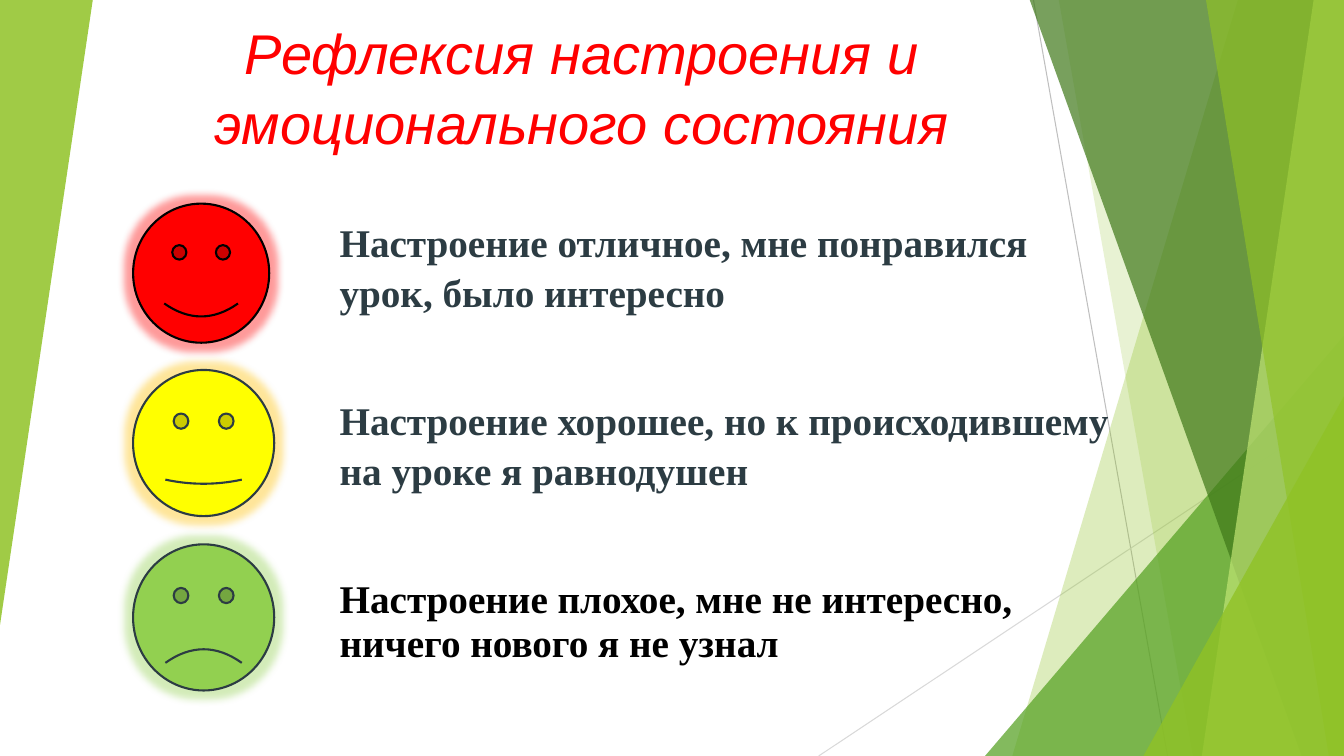
from lxml import etree
from pptx import Presentation
from pptx.dml.color import RGBColor
from pptx.enum.shapes import MSO_CONNECTOR, MSO_SHAPE
from pptx.enum.text import MSO_ANCHOR, MSO_AUTO_SIZE, PP_ALIGN
from pptx.oxml.ns import qn
from pptx.util import Inches, Pt

COLORS = {
    "lime": "90C226", "pale_lime": "C0E474", "green": "54A021",
    "dark_green": "3F7819", "gray": "BFBFBF", "light_gray": "D9D9D9",
    "red": "FF0000", "yellow": "FFFF00", "amber": "FFC000",
    "grass": "92D050", "slate": "2C3C43", "black": "000000",
}


def rgb(name):
    return RGBColor.from_string(COLORS[name])


def paint(sp, color, opacity=100):
    sp.shadow.inherit = False
    sp.fill.solid()
    sp.fill.fore_color.rgb = rgb(color)
    sp.line.fill.background()
    if opacity < 100:
        clr = sp.fill._xPr.find(qn("a:solidFill"))[0]
        etree.SubElement(clr, qn("a:alpha"), val=str(opacity * 1000))


def add_line(s, x1, y1, x2, y2, color):
    line = s.shapes.add_connector(
        MSO_CONNECTOR.STRAIGHT, Inches(x1), Inches(y1), Inches(x2), Inches(y2))
    line.line.color.rgb = rgb(color)
    line.line.width = Pt(0.75)
    etree.SubElement(line._element.spPr, qn("a:effectLst"))


def add_facet(s, top_left, bottom_left, color, opacity):
    top, bottom, right = Inches(-0.01), Inches(7.5), Inches(13.33)
    fb = s.shapes.build_freeform(Inches(top_left), top)
    fb.add_line_segments(
        [(right, top), (right, bottom), (Inches(bottom_left), bottom)], close=True)
    paint(fb.convert_to_shape(), color, opacity)


def add_triangle(s, x, y, w, h, color, opacity, rotation=0):
    sp = s.shapes.add_shape(
        MSO_SHAPE.ISOSCELES_TRIANGLE, Inches(x), Inches(y), Inches(w), Inches(h))
    sp.adjustments[0] = 1
    sp.rotation = rotation
    paint(sp, color, opacity)


def add_background(s):
    add_line(s, 10.25, 0, 11.58, 7.5, "gray")
    add_line(s, 13.33, 4.03, 8.12, 7.5, "light_gray")
    add_facet(s, 12.28, 10.04, "lime", 30)
    add_facet(s, 10.5, 11.83, "lime", 20)
    add_triangle(s, 9.77, 3.33, 3.56, 4.17, "green", 72)
    add_facet(s, 10.21, 12.91, "dark_green", 70)
    add_facet(s, 13.03, 11.92, "pale_lime", 70)
    add_facet(s, 11.96, 13.18, "lime", 65)
    add_triangle(s, 11.34, 3.93, 1.99, 3.57, "lime", 80)
    add_triangle(s, 0, 0, 0.92, 6.2, "lime", 85, rotation=180)


def write(tf, text, font, size, color, spacing):
    tf.word_wrap = True
    tf.auto_size = MSO_AUTO_SIZE.NONE
    p = tf.paragraphs[0]
    p.line_spacing = spacing
    r = p.add_run()
    r.text = text
    r.font.name = font
    r.font.size = Pt(size)
    r.font.color.rgb = rgb(color)
    return p, r


def set_title(s, text):
    title = s.shapes.title
    title.left, title.top = Inches(0.9), Inches(0.13)
    title.width, title.height = Inches(9.73), Inches(1.45)
    title.text_frame.vertical_anchor = MSO_ANCHOR.MIDDLE
    p, r = write(title.text_frame, text, "Arial", 40, "red", 1.04)
    p.alignment = PP_ALIGN.CENTER
    r.font.italic = True


def add_mood(s, text, y, w, h, color, anchor, spacing, bottom=0.05):
    tf = s.shapes.add_textbox(
        Inches(3.27), Inches(y), Inches(w), Inches(h)).text_frame
    tf.vertical_anchor = anchor
    tf.margin_bottom = Inches(bottom)
    p, r = write(tf, text, "Times New Roman", 28, color, spacing)
    r.font.bold = True


def add_smiley(s, y, w, h, smile, fill, line, glow):
    sp = s.shapes.add_shape(
        MSO_SHAPE.SMILEY_FACE, Inches(1.32), Inches(y), Inches(w), Inches(h))
    sp.adjustments[0] = smile
    paint(sp, fill)
    sp.line.color.rgb = rgb(line)
    sp.line.width = Pt(1.5)
    effects = sp._element.spPr.find(qn("a:effectLst"))
    halo = etree.SubElement(effects, qn("a:glow"), rad=str(Pt(11)))
    clr = etree.SubElement(halo, qn("a:srgbClr"), val=COLORS[glow])
    etree.SubElement(clr, qn("a:alpha"), val="40000")


def main():
    prs = Presentation()
    prs.slide_width, prs.slide_height = Inches(13.33), Inches(7.5)
    s = prs.slides.add_slide(prs.slide_layouts[5])
    add_background(s)
    set_title(s, "Рефлексия настроения и эмоционального состояния")
    add_mood(s, "Настроение отличное, мне понравился урок, было интересно",
             2.02, 7.36, 1.23, "slate", MSO_ANCHOR.MIDDLE, 1.06)
    add_mood(s, "Настроение хорошее, но к происходившему на уроке я равнодушен",
             4.02, 7.9, 1.19, "slate", MSO_ANCHOR.MIDDLE, 1.06, bottom=0.48)
    add_mood(s, "Настроение плохое, мне не интересно, ничего нового я не узнал",
             5.68, 7.58, 1.55, "black", MSO_ANCHOR.TOP, 0.95)
    add_smiley(s, 2.02, 1.35, 1.38, 0.047, "red", "black", "red")
    add_smiley(s, 3.67, 1.4, 1.45, 0.014, "yellow", "slate", "amber")
    add_smiley(s, 5.4, 1.4, 1.45, -0.047, "grass", "slate", "grass")
    prs.save("out.pptx")


if __name__ == "__main__":
    main()
